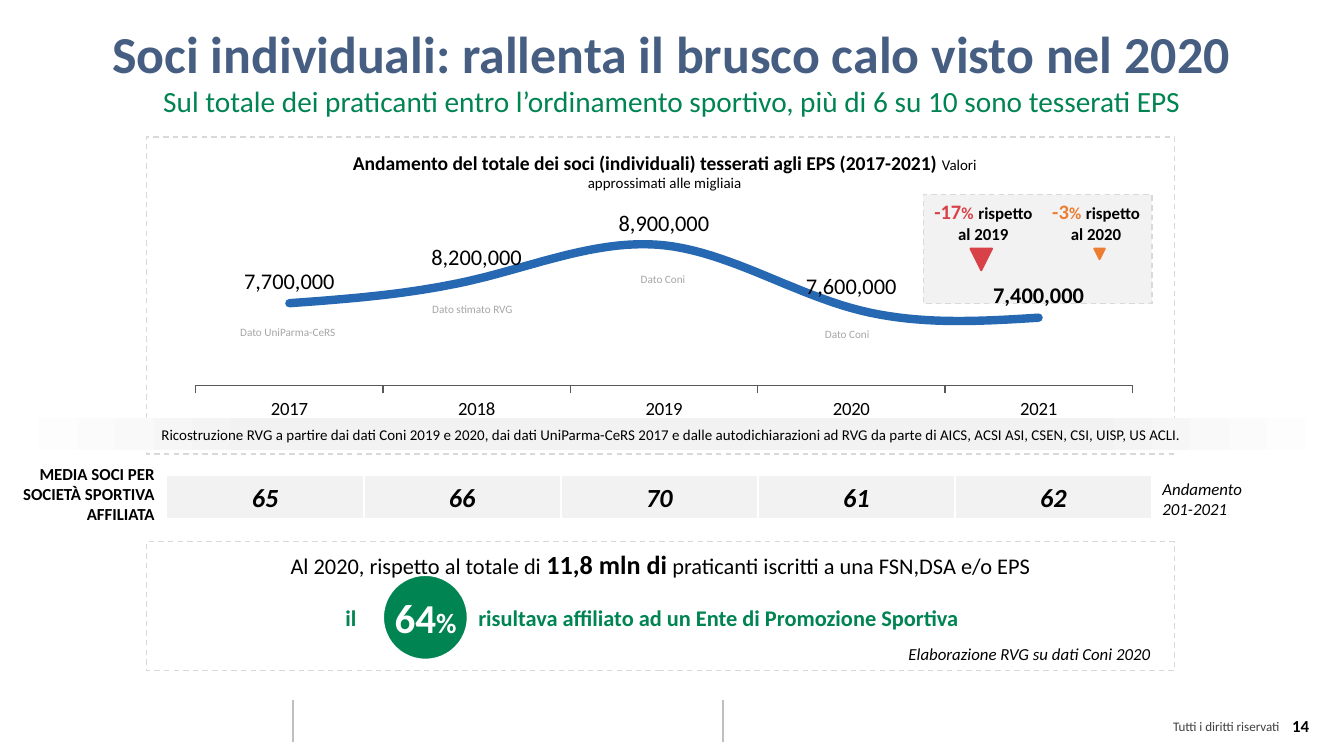
from pptx import Presentation
from pptx.chart.data import CategoryChartData
from pptx.dml.color import RGBColor
from pptx.enum.chart import XL_CHART_TYPE as ChartType, XL_LABEL_POSITION as LabelPosition
from pptx.enum.chart import XL_MARKER_STYLE as MarkerStyle, XL_TICK_MARK as TickMark
from pptx.enum.dml import MSO_LINE_DASH_STYLE as Dash
from pptx.enum.shapes import MSO_CONNECTOR_TYPE as ConnectorType, MSO_SHAPE as ShapeType
from pptx.enum.text import MSO_ANCHOR as Anchor, PP_ALIGN as Align
from pptx.oxml import parse_xml
from pptx.oxml.ns import nsdecls, qn
from pptx.util import Cm, Pt

FONT = "Calibri"
BLACK = RGBColor(0x00, 0x00, 0x00)
WHITE = RGBColor(0xFF, 0xFF, 0xFF)
NAVY = RGBColor(0x46, 0x5E, 0x82)
GREEN = RGBColor(0x00, 0x84, 0x52)
BLUE = RGBColor(0x26, 0x68, 0xB2)
RED = RGBColor(0xD9, 0x41, 0x49)
ORANGE = RGBColor(0xED, 0x7D, 0x31)
DARK_GRAY = RGBColor(0x40, 0x40, 0x40)
AXIS_GRAY = RGBColor(0x59, 0x59, 0x59)
TAG_GRAY = RGBColor(0xA6, 0xA6, 0xA6)
RULE_GRAY = RGBColor(0xBF, 0xBF, 0xBF)
BORDER_GRAY = RGBColor(0xD9, 0xD9, 0xD9)
PALE_GRAY = RGBColor(0xF2, 0xF2, 0xF2)


def within(box, left, top, width, height):
    return box[0] + left, box[1] + top, width, height


def lengths(box):
    return [Cm(value) for value in box]


def format_font(font, size, color=BLACK, bold=False, italic=False):
    font.name, font.size, font.bold, font.italic = FONT, Pt(size), bold, italic
    font.color.rgb = color


def add_run(paragraph, text, **style):
    run = paragraph.add_run()
    run.text = text
    format_font(run.font, **style)


def fill_text(frame, paragraphs, align=Align.LEFT, wrap=True):
    frame.word_wrap = wrap
    for index, runs in enumerate(paragraphs):
        paragraph = frame.add_paragraph() if index else frame.paragraphs[0]
        paragraph.alignment = align
        for text, style in runs:
            add_run(paragraph, text, **style)


def add_text(slide, box, paragraphs, **layout):
    shape = slide.shapes.add_textbox(*lengths(box))
    fill_text(shape.text_frame, paragraphs, **layout)
    return shape


def add_shape(slide, kind, box, fill=None, line=None, weight=1, dash=None):
    shape = slide.shapes.add_shape(kind, *lengths(box))
    shape.shadow.inherit = False
    if fill is None:
        shape.fill.background()
    else:
        shape.fill.solid()
        shape.fill.fore_color.rgb = fill
    if line is None:
        shape.line.fill.background()
    else:
        shape.line.color.rgb = line
        shape.line.width = Pt(weight)
        shape.line.dash_style = dash
    return shape


def add_dashed_box(slide, box, fill=None):
    add_shape(slide, ShapeType.RECTANGLE, box, fill, BORDER_GRAY, 0.75, Dash.DASH)


def add_heading(slide, box):
    add_text(slide, box, [
        [("Soci individuali: rallenta il brusco calo visto nel 2020",
          dict(size=27.8, color=NAVY, bold=True))],
        [("Sul totale dei praticanti entro l’ordinamento sportivo, più di 6 su 10 sono tesserati EPS",
          dict(size=15.7, color=GREEN))],
    ], align=Align.CENTER)


def add_members_chart(slide, box):
    data = CategoryChartData(number_format="#,##0")
    data.categories = ["2017", "2018", "2019", "2020", "2021"]
    data.add_series("Soci", [7700000, 8200000, 8900000, 7600000, 7400000])
    chart = slide.shapes.add_chart(ChartType.LINE_MARKERS, *lengths(box), data).chart
    format_font(chart.font, 10)
    chart.has_legend = chart.has_title = False

    value_axis, category_axis = chart.value_axis, chart.category_axis
    value_axis.minimum_scale, value_axis.maximum_scale = 6000000, 11000000
    value_axis.has_major_gridlines = value_axis.visible = False
    category_axis.major_tick_mark = TickMark.OUTSIDE
    category_axis.format.line.color.rgb = AXIS_GRAY
    category_axis.format.line.width = Pt(0.75)
    format_font(category_axis.tick_labels.font, 10)

    plot = chart.plots[0]
    plot.vary_by_categories = False
    series = plot.series[0]
    series.smooth = True
    series.format.line.color.rgb = BLUE
    series.format.line.width = Pt(4.5)
    series._element.find(qn("c:spPr")).find(qn("a:ln")).set("cap", "rnd")
    series.marker.style, series.marker.size = MarkerStyle.CIRCLE, 3
    series.marker.format.fill.solid()
    series.marker.format.fill.fore_color.rgb = BLUE
    series.marker.format.line.color.rgb = BLUE

    labels = series.data_labels
    labels.show_value = True
    labels.number_format, labels.number_format_is_linked = "#,##0", False
    labels.position = LabelPosition.ABOVE
    format_font(labels.font, 12)
    last_label = series.points[4].data_label
    format_font(last_label.font, 12, bold=True)
    last_label.position = LabelPosition.ABOVE

    plot_area = chart._chartSpace.chart.plotArea
    for layout in plot_area.findall(qn("c:layout")):
        plot_area.remove(layout)
    plot_area.insert(0, parse_xml(
        f'<c:layout {nsdecls("c")}><c:manualLayout><c:layoutTarget val="inner"/>'
        '<c:xMode val="edge"/><c:yMode val="edge"/><c:x val="0.02"/><c:y val="0"/>'
        '<c:w val="0.96"/><c:h val="0.86"/></c:manualLayout></c:layout>'))
    chart._chartSpace.chart.addnext(parse_xml(
        f'<c:spPr {nsdecls("c", "a")}><a:noFill/><a:ln><a:noFill/></a:ln></c:spPr>'))


def add_change(slide, box, percent, year, color, triangle_left, size):
    add_text(slide, box, [
        [(percent, dict(size=11, color=color, bold=True)),
         ("%", dict(size=9, color=color, bold=True)),
         (" ", dict(size=11, color=color, bold=True)),
         ("rispetto", dict(size=9, bold=True))],
        [(f"al {year}", dict(size=9, bold=True))],
    ], align=Align.CENTER)
    triangle = add_shape(slide, ShapeType.ISOSCELES_TRIANGLE,
                         within(box, triangle_left, 1.07, size, size), color, color)
    triangle.rotation = 180


def add_note_band(slide, box):
    band = add_shape(slide, ShapeType.RECTANGLE, box, PALE_GRAY)
    stops = "".join(
        f'<a:gs pos="{position * 1000}"><a:srgbClr val="{color}"/></a:gs>'
        for position, color in [(0, WHITE), (20, PALE_GRAY), (80, PALE_GRAY), (100, WHITE)])
    properties = band._element.spPr
    properties.replace(properties.find(qn("a:solidFill")), parse_xml(
        f'<a:gradFill {nsdecls("a")}><a:gsLst>{stops}</a:gsLst><a:lin ang="0"/></a:gradFill>'))
    band.text_frame.vertical_anchor = Anchor.MIDDLE
    fill_text(band.text_frame, [[(
        "Ricostruzione RVG a partire dai dati Coni 2019 e 2020, dai dati UniParma-CeRS 2017 e dalle "
        "autodichiarazioni ad RVG da parte di AICS, ACSI ASI, CSEN, CSI, UISP, US ACLI.",
        dict(size=8))]], align=Align.CENTER)


def add_trend_panel(slide, box):
    badge = within(box, 14.68, 1.09, 4.32, 2.06)
    add_dashed_box(slide, badge, PALE_GRAY)
    add_members_chart(slide, within(box, 0.56, 0.13, 18.44, 5.31))
    add_dashed_box(slide, box)
    add_text(slide, within(box, 3.61, 0.13, 12.37, 1.04), [[
        ("Andamento del totale dei soci (individuali) tesserati agli EPS (2017-2021) ",
         dict(size=10.5, bold=True)),
        ("Valori approssimati alle migliaia", dict(size=8))]], align=Align.CENTER)
    add_note_band(slide, within(box, -box[0], 5.31, 25.4, 0.61))
    add_change(slide, within(badge, -0.15, -0.05, 2.57, 1.12), "-17", 2019, RED, 1.04, 0.41)
    add_change(slide, within(badge, 1.98, -0.05, 2.57, 1.12), "-3", 2020, ORANGE, 1.25, 0.2)
    for text, left, top, width in [
            ("Dato UniParma-CeRS", 1.52, 3.43, 2.34), ("Dato stimato RVG", 5.15, 3, 2.11),
            ("Dato Coni", 9.09, 2.44, 1.37), ("Dato Coni", 12.57, 3.48, 1.37)]:
        add_text(slide, within(box, left, top, width, 0.51),
                 [[(text, dict(size=6, color=TAG_GRAY))]], wrap=False)


def add_cell_borders(cell):
    properties = cell._tc.get_or_add_tcPr()
    for index, (side, weight) in enumerate([("L", 1), ("R", 1), ("T", 1), ("B", 3)]):
        properties.insert(index, parse_xml(
            f'<a:ln{side} {nsdecls("a")} w="{Pt(weight)}"><a:solidFill>'
            f'<a:srgbClr val="{WHITE}"/></a:solidFill></a:ln{side}>'))


def add_average_row(slide, box):
    averages = ["65", "66", "70", "61", "62"]
    table = slide.shapes.add_table(1, len(averages), *lengths(box)).table
    table.first_row = table.horz_banding = False
    for cell, average in zip(table.iter_cells(), averages):
        cell.fill.solid()
        cell.fill.fore_color.rgb = PALE_GRAY
        add_cell_borders(cell)
        cell.vertical_anchor = Anchor.MIDDLE
        fill_text(cell.text_frame, [[(average, dict(size=14, bold=True, italic=True))]],
                  align=Align.CENTER)
    add_text(slide, within(box, -box[0], -0.35, 3.17, 1.42),
             [[("MEDIA SOCI PER SOCIETÀ SPORTIVA AFFILIATA", dict(size=9, bold=True))]],
             align=Align.RIGHT)
    add_text(slide, within(box, 18.57, -0.07, 3.63, 1.02),
             [[(text, dict(size=9, italic=True))] for text in ("Andamento", "201-2021")])


def add_share_panel(slide, box):
    green_text = dict(size=12, color=GREEN, bold=True)
    add_dashed_box(slide, box)
    add_text(slide, within(box, 14.15, 1.8, 5.28, 0.64),
             [[("Elaborazione RVG su dati Coni 2020", dict(size=9, italic=True))]], wrap=False)
    add_text(slide, within(box, 0, 0, box[2], 0.86), [[
        ("Al 2020, rispetto al totale di ", dict(size=12)),
        ("11,8 mln di", dict(size=14, bold=True)),
        (" praticanti iscritti a una FSN,DSA e/o EPS", dict(size=12))]], align=Align.CENTER)
    add_shape(slide, ShapeType.OVAL, within(box, 4.47, 0.63, 1.6, 1.6), GREEN, WHITE)
    add_text(slide, within(box, 4.44, 0.83, 1.75, 1.19), [[
        ("64", dict(size=22, color=WHITE, bold=True)),
        ("%", dict(size=15, color=WHITE, bold=True))]])
    add_text(slide, within(box, 3.51, 1.06, 1, 0.76), [[("il", green_text)]])
    add_text(slide, within(box, 6.02, 1.06, 11.13, 0.76),
             [[("risultava affiliato ad un Ente di Promozione Sportiva", green_text)]])


def add_footer(slide, box):
    for left in (5.54, 13.67):
        x, top, _, height = lengths(within(box, left, 0, 0, 0.79))
        rule = slide.shapes.add_connector(ConnectorType.STRAIGHT, x, top, x, top + height)
        rule.line.color.rgb = RULE_GRAY
        rule.line.width = Pt(1)
        rule._element.spPr.append(parse_xml(f'<a:effectLst {nsdecls("a")}/>'))
    rights = add_text(slide, within(box, 19.53, 0.26, 4.83, 0.48),
                      [[("Tutti i diritti riservati", dict(size=7, color=DARK_GRAY))]],
                      align=Align.RIGHT)
    frame = rights.text_frame
    frame.margin_left = frame.margin_right = Cm(0.18)
    frame.margin_top = frame.margin_bottom = Cm(0.1)
    add_text(slide, within(box, 23.67, 0.18, 1.32, 0.76),
             [[("14", dict(size=9, bold=True))]], align=Align.RIGHT)


def main():
    presentation = Presentation()
    presentation.slide_width, presentation.slide_height = Cm(25.4), Cm(14.29)
    slide = presentation.slides.add_slide(presentation.slide_layouts[6])
    add_footer(slide, (0, 13.23, 25.4, 1.06))
    add_heading(slide, (0, 0.28, 25.4, 2.08))
    add_trend_panel(slide, (2.77, 2.59, 19.43, 5.99))
    add_average_row(slide, (3.15, 8.99, 18.62, 0.84))
    add_share_panel(slide, (2.77, 10.24, 19.43, 2.44))
    presentation.save("out.pptx")


if __name__ == "__main__":
    main()
